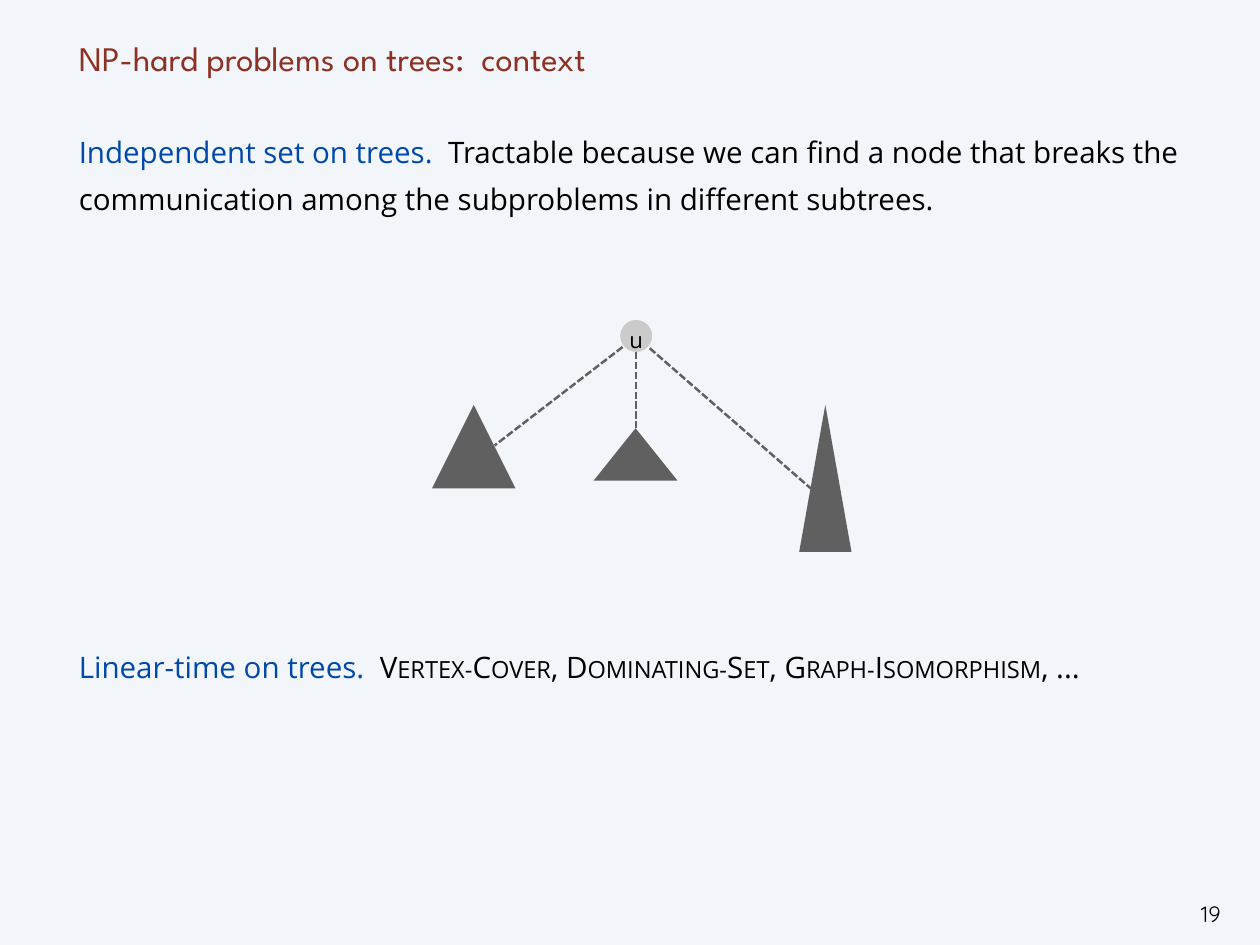
from lxml import etree
from pptx import Presentation
from pptx.dml.color import RGBColor
from pptx.enum import dml, shapes, text
from pptx.oxml.ns import qn
from pptx.util import Pt

COLORS = {
    "background": "F2F6FA",
    "title": "8D3124",
    "lead": "0048AA",
    "text": "000000",
    "node": "CBCBCB",
    "tree": "606060",
}
NODE = (504, 260, 26, 26)
# Each subtree: triangle box, then the edge from u (start x, y, end x, y)
SUBTREES = [
    ((351, 329, 68, 68), (506, 282, 402, 362)),
    ((482.5, 348, 68, 42.5), (517, 286, 517, 348)),
    ((649.5, 329, 42.5, 119.5), (528, 283, 659, 397)),
]
LINE_HEIGHT = 38


def rgb(name):
    return RGBColor.from_string(COLORS[name])


def set_frame(tf, anchor, wrap=True):
    tf.margin_left = tf.margin_top = tf.margin_right = tf.margin_bottom = 0
    tf.vertical_anchor = anchor
    tf.word_wrap = wrap


def set_paragraph(p, font, size, spacing, align=text.PP_ALIGN.LEFT):
    p.font.name = font
    p.font.size = Pt(size)
    p.font.color.rgb = rgb("text")
    p.line_spacing = spacing
    p.alignment = align


def add_text_box(slide, box, anchor=text.MSO_ANCHOR.TOP, wrap=True):
    tf = slide.shapes.add_textbox(*map(Pt, box)).text_frame
    set_frame(tf, anchor, wrap)
    return tf


def add_run(p, words, color="text", small_caps=False):
    r = p.add_run()
    r.text = words
    r.font.color.rgb = rgb(color)
    if small_caps:
        r._r.get_or_add_rPr().set("cap", "small")


def add_shape(slide, kind, box, color):
    sp = slide.shapes.add_shape(kind, *map(Pt, box))
    sp.shadow.inherit = False
    sp.fill.solid()
    sp.fill.fore_color.rgb = rgb(color)
    sp.line.fill.background()
    return sp


def add_edge(slide, ends):
    """Draw a dashed tree edge."""
    line = slide.shapes.add_connector(shapes.MSO_CONNECTOR.STRAIGHT, *map(Pt, ends))
    line.line.color.rgb = rgb("tree")
    line.line.width = Pt(2)
    line.line.dash_style = dml.MSO_LINE.SQUARE_DOT
    etree.SubElement(line._element.spPr, qn("a:effectLst"))


def add_title(slide):
    tf = add_text_box(slide, (64, 0, 896, 64), text.MSO_ANCHOR.BOTTOM)
    p = tf.paragraphs[0]
    p.text = "NP-hard problems on trees:  context"
    set_paragraph(p, "League Spartan", 28, Pt(LINE_HEIGHT))
    p.font.color.rgb = rgb("title")


def add_body(slide):
    tf = add_text_box(slide, (64, 100, 896, 644))
    independent, linear = tf.paragraphs[0], tf.add_paragraph()
    for p in (independent, linear):
        set_paragraph(p, "Open Sans", 24, Pt(LINE_HEIGHT))
    add_run(independent, "Independent set on trees.  ", "lead")
    add_run(independent, "Tractable because we can find a node that breaks the "
                         "communication among the subproblems in different subtrees.")

    linear.space_before = Pt(9 * LINE_HEIGHT)
    add_run(linear, "Linear-time on trees.  ", "lead")
    for problem in ("Vertex-Cover", "Dominating-Set", "Graph-Isomorphism"):
        add_run(linear, problem, small_caps=True)
        add_run(linear, ", ")
    add_run(linear, "...")


def add_tree(slide):
    node = add_shape(slide, shapes.MSO_SHAPE.OVAL, NODE, "node")
    set_frame(node.text_frame, text.MSO_ANCHOR.MIDDLE, wrap=False)
    p = node.text_frame.paragraphs[0]
    p.text = "u"
    set_paragraph(p, "Open Sans", 18, 1.3, text.PP_ALIGN.CENTER)
    for _, ends in SUBTREES:
        add_edge(slide, ends)
    for box, _ in SUBTREES:
        add_shape(slide, shapes.MSO_SHAPE.ISOSCELES_TRIANGLE, box, "tree")


def add_page_number(slide):
    p = add_text_box(slide, (973, 739, 22, 15), wrap=False).paragraphs[0]
    p.text = "19"
    set_paragraph(p, "Quicksand", 18, Pt(14), text.PP_ALIGN.CENTER)


def main():
    prs = Presentation()
    prs.slide_width, prs.slide_height = Pt(1024), Pt(768)
    slide = prs.slides.add_slide(prs.slide_layouts[6])
    slide.background.fill.solid()
    slide.background.fill.fore_color.rgb = rgb("background")
    add_page_number(slide)
    add_title(slide)
    add_body(slide)
    add_tree(slide)
    prs.save("out.pptx")


if __name__ == "__main__":
    main()
